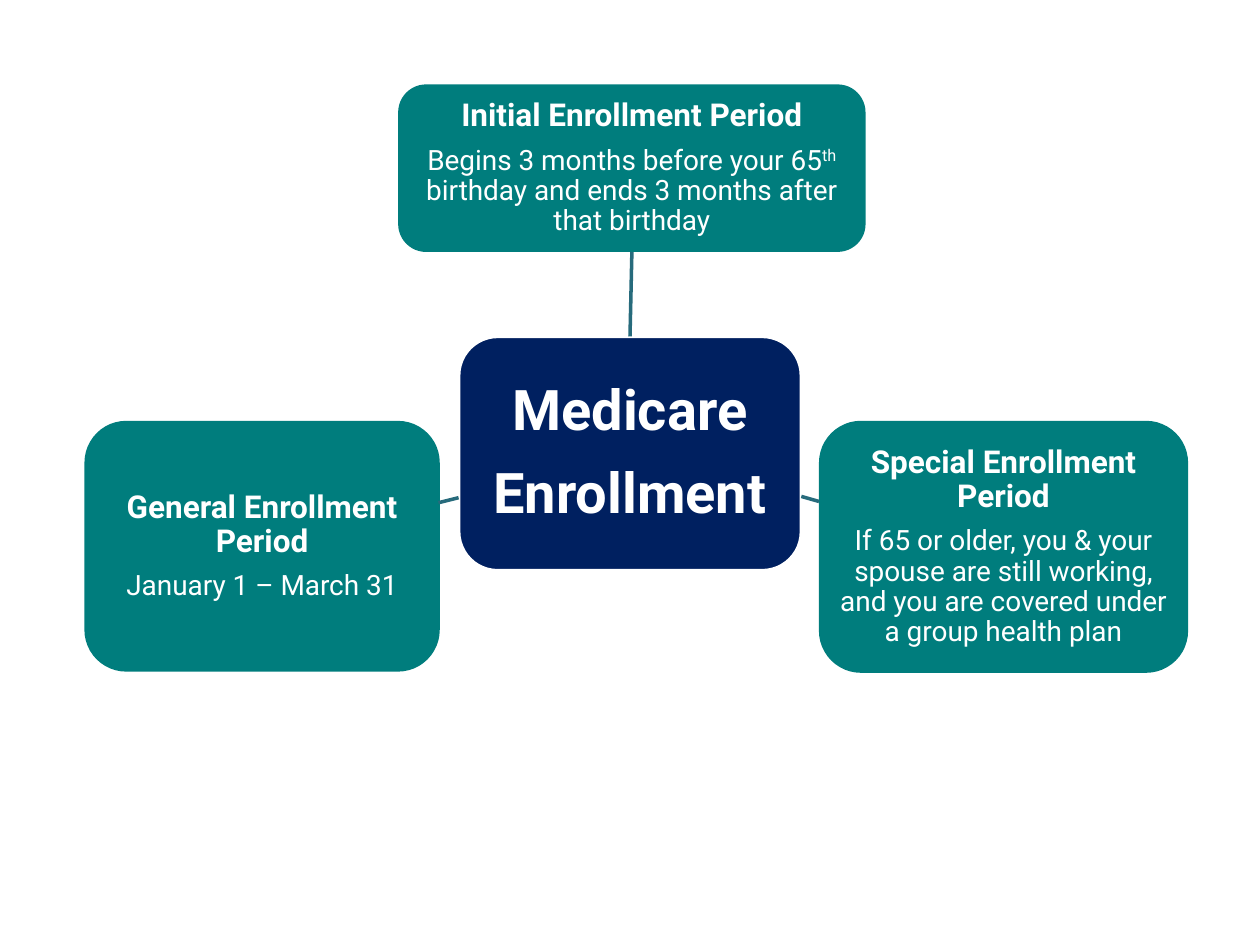
from dataclasses import dataclass

from pptx import Presentation
from pptx.dml.color import RGBColor
from pptx.enum.shapes import MSO_CONNECTOR, MSO_SHAPE
from pptx.enum.text import MSO_ANCHOR, PP_ALIGN
from pptx.oxml.ns import qn
from pptx.util import Inches, Pt

ROUNDED = MSO_SHAPE.ROUNDED_RECTANGLE
STRAIGHT = MSO_CONNECTOR.STRAIGHT
MIDDLE = MSO_ANCHOR.MIDDLE
CENTER = PP_ALIGN.CENTER

FONT = "Roboto"
COLORS = {"navy": "002060", "teal": "007D7D", "link": "276B7C", "white": "FFFFFF"}
TOP, BOTTOM = 0, 2


@dataclass
class Line:
    runs: list[str]
    size: int
    bold: bool = False
    superscript: str = ""


@dataclass
class Box:
    left: float
    top: float
    width: float
    height: float
    lines: list[Line]
    fill: str = "teal"
    inset: float = 0.05
    outlined: bool = False


def color(name: str) -> RGBColor:
    return RGBColor.from_string(COLORS[name])


def period(left: float, top: float, width: float, height: float,
           title: str, detail: list[str], superscript: str = "") -> Box:
    return Box(left, top, width, height,
               [Line([title], 18, True), Line(detail, 16, superscript=superscript)])


def add_line(p, line: Line) -> None:
    p.alignment = CENTER
    p.line_spacing = 0.9
    p.space_after = Pt(round(line.size * 0.4, 1))
    p.font.name = FONT
    p.font.size = Pt(line.size)
    p.font.bold = line.bold
    p.font.color.rgb = color("white")
    for text in line.runs:
        r = p.add_run()
        r.text = text
        if text == line.superscript:
            r.font._element.set("baseline", "30000")


def add_box(slide, box: Box):
    sp = slide.shapes.add_shape(ROUNDED, Inches(box.left), Inches(box.top),
                                Inches(box.width), Inches(box.height))
    sp.shadow.inherit = False
    sp.fill.solid()
    sp.fill.fore_color.rgb = color(box.fill)
    if box.outlined:
        sp.line.color.rgb = color("white")
        sp.line.width = Pt(2)
    else:
        sp.line.fill.background()
    tf = sp.text_frame
    tf.word_wrap = True
    tf.vertical_anchor = MIDDLE
    tf.margin_left = tf.margin_right = Inches(box.inset)
    tf.margin_top = tf.margin_bottom = Inches(box.inset)
    for i, line in enumerate(box.lines):
        add_line(tf.add_paragraph() if i else tf.paragraphs[0], line)
    return sp


def add_link(slide, x1: float, y1: float, x2: float, y2: float):
    link = slide.shapes.add_connector(STRAIGHT, Inches(x1), Inches(y1), Inches(x2), Inches(y2))
    link.line.color.rgb = color("link")
    link.line.width = Pt(2)
    sp_pr = link._element.spPr
    sp_pr.append(sp_pr.makeelement(qn("a:effectLst"), {}))
    return link


HUB = Box(3.64, 2.67, 2.72, 1.86,
          [Line([word], 32, True) for word in ("Medicare", "Enrollment")],
          fill="navy", inset=0.09, outlined=True)
INITIAL = period(3.16, 0.67, 3.71, 1.33, "Initial Enrollment Period",
                 ["Begins 3 months before your 65", "th",
                  " birthday and ends 3 months after that birthday"], "th")
SPECIAL = period(6.5, 3.34, 2.93, 2, "Special Enrollment Period",
                 ["If 65 or older, you & your spouse are still working, "
                  "and you are covered under a group health plan"])
GENERAL = period(0.67, 3.34, 2.82, 1.99, "General Enrollment Period",
                 ["January 1 – March 31"])


def main() -> None:
    """Build the Medicare enrollment periods slide."""
    prs = Presentation()
    prs.slide_width, prs.slide_height = Inches(10), Inches(7.5)
    slide = prs.slides.add_slide(prs.slide_layouts[6])
    hub, initial, _, _ = [add_box(slide, box) for box in (HUB, INITIAL, SPECIAL, GENERAL)]
    link = add_link(slide, 5, 2.67, 5.01, 2)
    link.begin_connect(hub, TOP)
    link.end_connect(initial, BOTTOM)
    add_link(slide, 6.36, 3.94, 6.5, 3.98)
    add_link(slide, 3.64, 3.95, 3.48, 3.99)
    prs.save("out.pptx")


if __name__ == "__main__":
    main()
